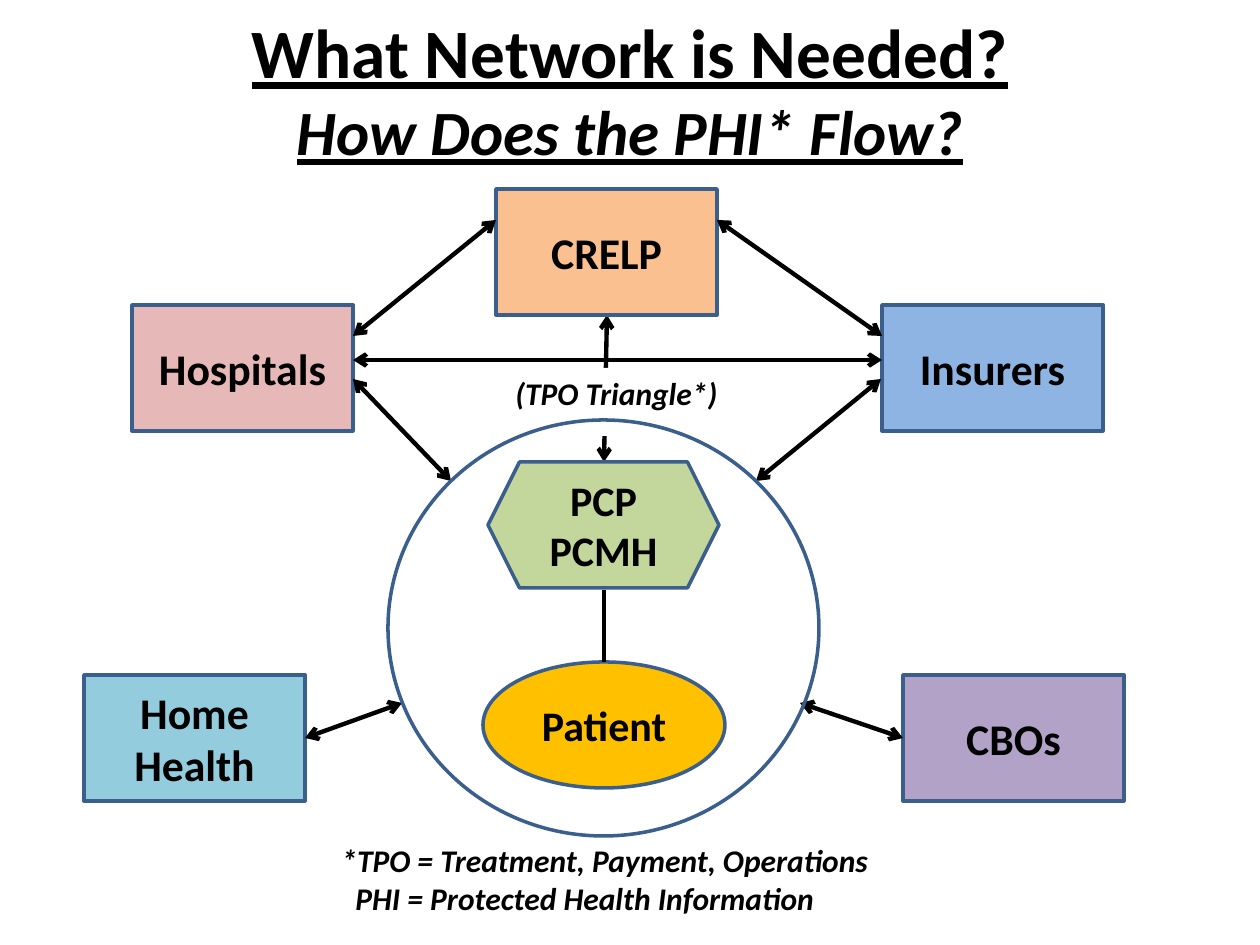
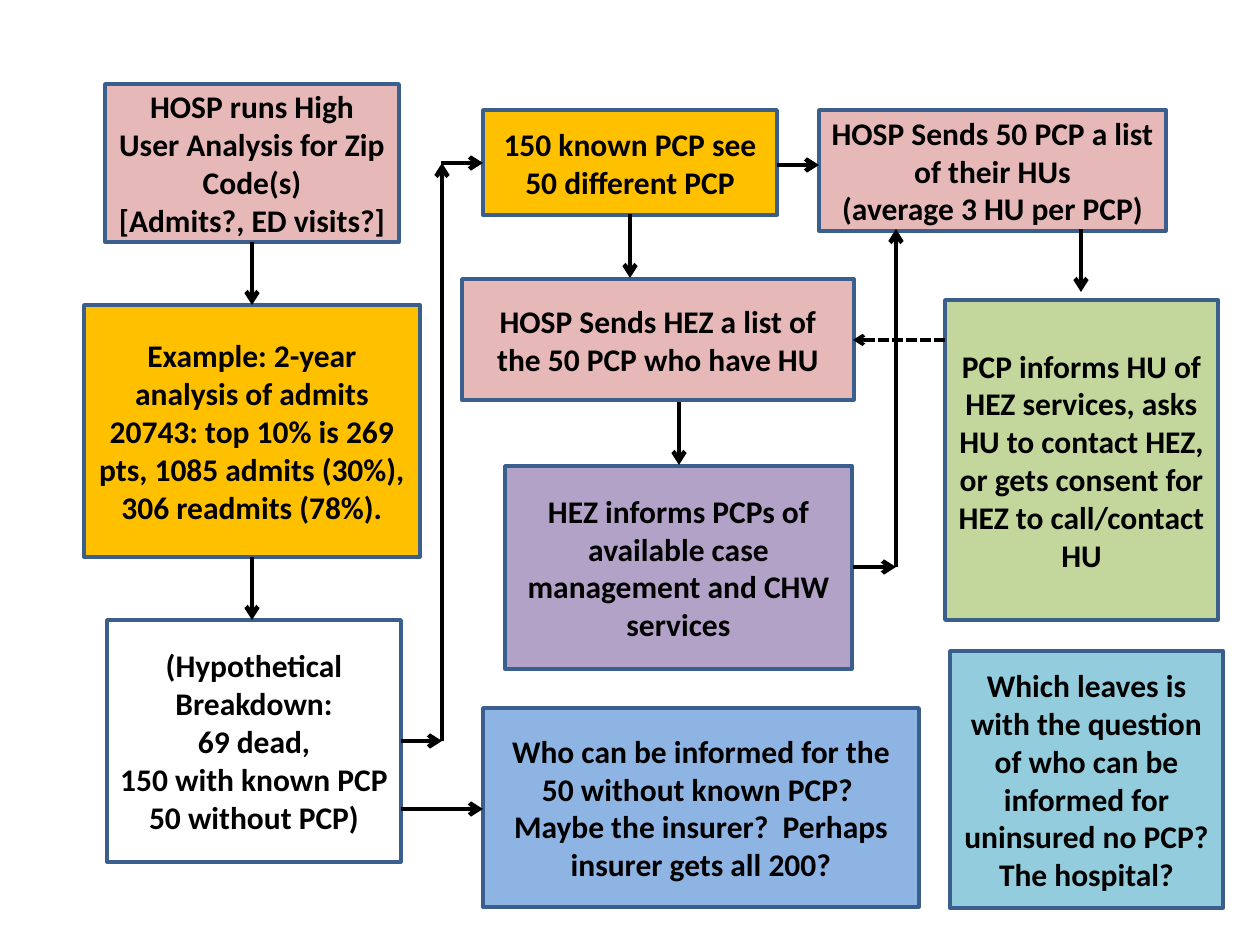
from lxml import etree
from pptx import Presentation
from pptx.dml.color import RGBColor
from pptx.enum.dml import MSO_LINE
from pptx.enum.shapes import MSO_CONNECTOR, MSO_SHAPE
from pptx.enum.text import MSO_ANCHOR, MSO_AUTO_SIZE, PP_ALIGN
from pptx.oxml.ns import qn
from pptx.util import Pt

PX = 914400 / 126  # EMU in one px; a slide is 1260 x 945 px
FONT = "Calibri"
BLACK, WHITE, OUTLINE = "000000", "FFFFFF", "3A5F8C"
ROSE, GOLD, GREEN, PURPLE = "E6B9B8", "FFC000", "C3D69B", "B3A2C7"
BLUE, AQUA, ORANGE = "8EB4E3", "93CDDD", "FAC090"
RECTANGLE, OVAL, HEXAGON = MSO_SHAPE.RECTANGLE, MSO_SHAPE.OVAL, MSO_SHAPE.HEXAGON
STRAIGHT = MSO_CONNECTOR.STRAIGHT
DASHED = MSO_LINE.SQUARE_DOT
CENTER, LEFT = PP_ALIGN.CENTER, PP_ALIGN.LEFT
MIDDLE, TOP = MSO_ANCHOR.MIDDLE, MSO_ANCHOR.TOP
NO_AUTOFIT = MSO_AUTO_SIZE.NONE
BOTH_ENDS = ("headEnd", "tailEnd")

rgb = RGBColor.from_string


def add_box(slide, place, fill, lines, size=18, kind=RECTANGLE, label=False):
    """Add an outlined box with centred text, or a plain italic label."""
    shape = slide.shapes.add_shape(kind, *[round(value * PX) for value in place])
    shape.shadow.inherit = False
    if fill:
        shape.fill.solid()
        shape.fill.fore_color.rgb = rgb(fill)
    else:
        shape.fill.background()
    if label:
        shape.line.fill.background()
    else:
        shape.line.color.rgb = rgb(OUTLINE)
        shape.line.width = Pt(2)
    frame = shape.text_frame
    frame.word_wrap = not label
    frame.vertical_anchor = TOP if label else MIDDLE
    for index, line in enumerate(lines):
        paragraph = frame.add_paragraph() if index else frame.paragraphs[0]
        paragraph.alignment = LEFT if label else CENTER
        run = paragraph.add_run()
        run.text = line
        run.font.name = FONT
        run.font.size = Pt(size)
        run.font.bold = True
        run.font.italic = label
        run.font.color.rgb = rgb(BLACK)
    return shape


def add_arrow(slide, points, ends=("tailEnd",), width=2.5, dash=None):
    connector = slide.shapes.add_connector(STRAIGHT, *[round(value * PX) for value in points])
    connector.line.color.rgb = rgb(BLACK)
    connector.line.width = Pt(width)
    if dash:
        connector.line.dash_style = dash
    properties = connector.element.spPr
    for end in ends:
        etree.SubElement(properties.find(qn("a:ln")), qn(f"a:{end}"), type="arrow")
    etree.SubElement(properties, qn("a:effectLst"))


presentation = Presentation()
presentation.slide_width = round(1260 * PX)
presentation.slide_height = round(945 * PX)
title_only, blank = presentation.slide_layouts[5], presentation.slide_layouts[6]

# Slide 1: who exchanges health information
slide = presentation.slides.add_slide(title_only)
title = slide.shapes.title
title.left, title.top, title.width, title.height = [
    round(value * PX) for value in (63, 10, 1134, 158)]
title.text_frame.auto_size = NO_AUTOFIT
title.text_frame.vertical_anchor = MIDDLE
paragraph = title.text_frame.paragraphs[0]
paragraph.alignment = CENTER
for text, size, italic in [("What Network is Needed?", 39.6, False),
                           ("How Does the PHI* Flow?", 36, True)]:
    if italic:
        paragraph.add_line_break()
    run = paragraph.add_run()
    run.text = text
    run.font.name = FONT
    run.font.size = Pt(size)
    run.font.bold = True
    run.font.underline = True
    run.font.italic = italic
    run.font.color.rgb = rgb(BLACK)

add_arrow(slide, (604, 462, 607, 315), BOTH_ENDS)
add_box(slide, (483, 662, 242, 126), GOLD, ["Patient"], 24, OVAL)
add_box(slide, (488, 462, 231, 126), GREEN, ["PCP", "PCMH"], 24, HEXAGON)
add_arrow(slide, (604, 662, 604, 590), ends=())

for left, top, fill, partner in [
    (132, 305, ROSE, "Hospitals"),
    (882, 305, BLUE, "Insurers"),
    (496, 189, ORANGE, "CRELP"),
    (84, 675, AQUA, "Home Health"),
    (903, 675, PURPLE, "CBOs"),
]:
    add_box(slide, (left, top, 221, 126), fill, [partner], 25)

for points in [
    (353, 336, 496, 220),
    (717, 220, 882, 336),
    (353, 360, 882, 360),
    (353, 379, 451, 481),
    (756, 481, 881, 379),
    (402, 703, 305, 738),
    (903, 738, 800, 703),
]:
    add_arrow(slide, points, BOTH_ENDS)

add_box(slide, (503, 368, 229, 68), WHITE, ["(TPO Triangle*)"], label=True)
add_box(slide, (388, 420, 431, 416), None, [], kind=OVAL)
footnote = add_box(slide, (329, 835, 556, 89), None,
                   ["*TPO = Treatment, Payment, Operations",
                    "PHI = Protected Health Information"], label=True)
second_line = footnote.text_frame.paragraphs[1].runs[0].font
indent = footnote.element.txBody.findall(qn("a:p"))[1].find(qn("a:pPr"))
indent.set("marL", str(round(14 * PX)))

# Slide 2: how high users (HU) are found and reached
slide = presentation.slides.add_slide(blank)
for place, fill, lines in [
    ((105, 84, 294, 158), ROSE,
     ["HOSP runs High User Analysis for Zip Code(s)", "[Admits?, ED visits?]"]),
    ((84, 305, 336, 252), GOLD,
     ["Example: 2-year analysis of admits 20743: top 10% is 269 pts, "
      "1085 admits (30%), 306 readmits (78%)."]),
    ((107, 620, 294, 242), WHITE,
     ["(Hypothetical Breakdown:", "69 dead,", "150 with known PCP", "50 without PCP)"]),
    ((483, 110, 294, 105), GOLD, ["150 known PCP see 50 different PCP"]),
    ((819, 110, 347, 121), ROSE,
     ["HOSP Sends 50 PCP a list of their HUs", "(average 3 HU per PCP)"]),
    ((462, 279, 392, 121), ROSE, ["HOSP Sends HEZ a list of the 50 PCP who have HU"]),
    ((505, 466, 347, 203), PURPLE,
     ["HEZ informs PCPs of available case management and CHW services"]),
    ((945, 300, 273, 320), GREEN,
     ["PCP informs HU of HEZ services, asks HU to contact HEZ, "
      "or gets consent for HEZ to call/contact HU"]),
    ((483, 708, 436, 199), BLUE,
     ["Who can be informed for the 50 without known PCP?  Maybe the insurer?  "
      "Perhaps insurer gets all 200?"]),
    ((950, 651, 273, 257), AQUA,
     ["Which leaves is with the question of who can be informed for uninsured no PCP?",
      "The hospital?"]),
]:
    add_box(slide, place, fill, lines)

for points in [
    (252, 242, 252, 305),
    (252, 557, 252, 620),
    (401, 741, 442, 741),
    (442, 741, 442, 163),
    (441, 163, 483, 163),
    (401, 809, 483, 809),
    (777, 165, 819, 165),
    (630, 214, 630, 278),
    (679, 402, 679, 465),
    (853, 567, 896, 567),
    (896, 567, 896, 229),
    (1081, 229, 1081, 292),
]:
    add_arrow(slide, points)
add_arrow(slide, (945, 340, 853, 340), width=2, dash=DASHED)

presentation.save("out.pptx")
